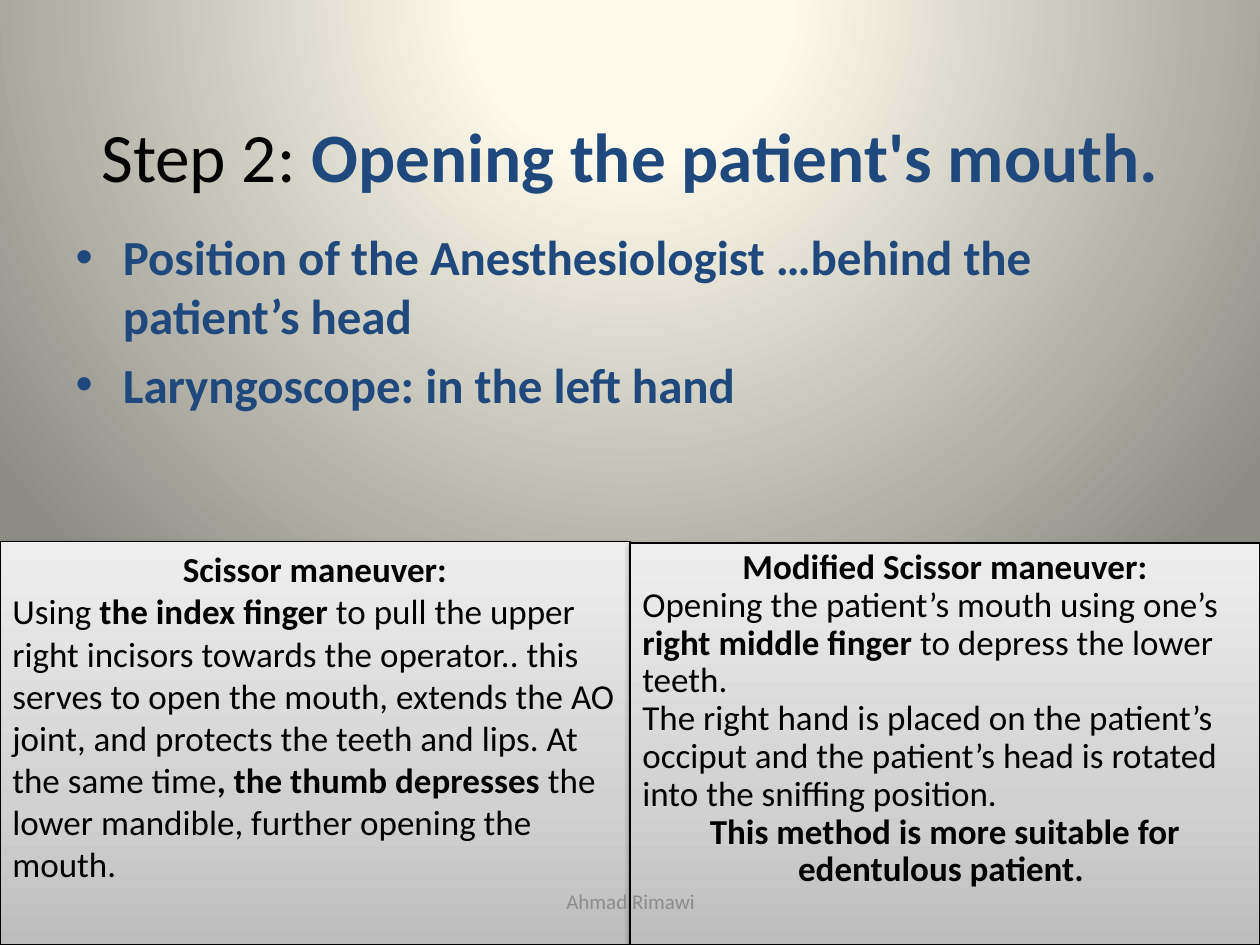
from dataclasses import dataclass

from lxml import etree
from pptx import Presentation
from pptx import util as u
from pptx.dml.color import RGBColor
from pptx.enum import shapes, text
from pptx.oxml.ns import qn


@dataclass(frozen=True)
class Theme:
    font: str = "Calibri"
    ink: str = "000000"
    accent: str = "1F497D"
    muted: str = "8C8C8C"
    title_size: float = 39.6
    bullet_size: float = 28
    panel_size: float = 20
    footer_size: float = 12
    backdrop: tuple = ((0, "FDFAEB"), (20, "FDFAEB"), (100, "8D8C85"))
    panel: tuple = ((0, "BDBDBD"), (35, "D1D1D1"), (100, "EEEEEE"))


THEME = Theme()
CENTER = text.PP_ALIGN.CENTER
LEFT = text.PP_ALIGN.LEFT


def add_node(parent, tag, **attributes):
    values = {name: str(value) for name, value in attributes.items()}
    return etree.SubElement(parent, qn(tag), values)


def start_gradient(fill, owner, stops):
    fill.gradient()
    gradient = owner.find(".//" + qn("a:gradFill"))
    for child in list(gradient):
        gradient.remove(child)
    stop_list = add_node(gradient, "a:gsLst")
    for percent, color in stops:
        stop = add_node(stop_list, "a:gs", pos=percent * 1000)
        add_node(stop, "a:srgbClr", val=color)
    return gradient


def paint_backdrop(slide):
    gradient = start_gradient(slide.background.fill, slide.element, THEME.backdrop)
    glow = add_node(gradient, "a:path", path="circle")
    add_node(glow, "a:fillToRect", l=10000, t=-25000, r=10000, b=125000)


def add_shadow(panel):
    panel.shadow.inherit = False
    effects = panel.element.spPr.find(qn("a:effectLst"))
    shadow = add_node(effects, "a:outerShdw", blurRad=u.Pt(3.1), dist=u.Pt(1.6),
                      dir=90 * 60000, rotWithShape=0)
    add_node(add_node(shadow, "a:srgbClr", val=THEME.ink), "a:alpha", val=38000)


def place(element, left, top, width, height):
    element.left, element.top = u.Inches(left), u.Inches(top)
    element.width, element.height = u.Inches(width), u.Inches(height)


def add_run(paragraph, wording, size, color, bold=False):
    run = paragraph.add_run()
    run.text = wording
    run.font.name = THEME.font
    run.font.size = u.Pt(size)
    run.font.bold = bold
    run.font.color.rgb = RGBColor.from_string(color)


def add_paragraphs(frame, count):
    return [frame.paragraphs[0]] + [frame.add_paragraph() for _ in range(count - 1)]


def fill_title(slide):
    title = slide.shapes.title
    place(title, 0.5, 0.6, 9, 1.25)
    heading = title.text_frame.paragraphs[0]
    add_run(heading, "Step 2: ", THEME.title_size, THEME.ink)
    add_run(heading, "Opening the patient's mouth.", THEME.title_size, THEME.accent, True)


def fill_bullets(slide, points):
    body = slide.placeholders[1]
    place(body, 0.5, 1.75, 9, 2.39)
    for paragraph, point in zip(add_paragraphs(body.text_frame, len(points)), points):
        add_run(paragraph, point, THEME.bullet_size, THEME.accent, True)


def add_panel(slide, left, top, paragraphs, line_spacing=None):
    panel = slide.shapes.add_shape(shapes.MSO_SHAPE.RECTANGLE, 0, 0, 0, 0)
    place(panel, left, top, 5, 7.5 - top)
    gradient = start_gradient(panel.fill, panel.element.spPr, THEME.panel)
    add_node(gradient, "a:lin", ang=270 * 60000, scaled=1)
    panel.line.color.rgb = RGBColor.from_string(THEME.ink)
    panel.line.width = u.Pt(0.75)
    add_shadow(panel)
    frame = panel.text_frame
    frame.word_wrap = True
    frame.auto_size = text.MSO_AUTO_SIZE.SHAPE_TO_FIT_TEXT
    frame.vertical_anchor = text.MSO_ANCHOR.TOP
    rows = add_paragraphs(frame, len(paragraphs))
    for paragraph, (alignment, runs) in zip(rows, paragraphs):
        paragraph.alignment = alignment
        paragraph.line_spacing = line_spacing
        for wording, bold in runs:
            add_run(paragraph, wording, THEME.panel_size, THEME.ink, bold)


def add_footer(slide, author):
    footer = slide.shapes.add_textbox(0, 0, 0, 0)
    place(footer, 3.42, 6.95, 3.17, 0.4)
    footer.text_frame.word_wrap = True
    footer.text_frame.vertical_anchor = text.MSO_ANCHOR.MIDDLE
    credit = footer.text_frame.paragraphs[0]
    credit.alignment = CENTER
    add_run(credit, author, THEME.footer_size, THEME.muted)


def main():
    deck = Presentation()
    deck.slide_width, deck.slide_height = u.Inches(10), u.Inches(7.5)
    slide = deck.slides.add_slide(deck.slide_layouts[1])
    paint_backdrop(slide)
    fill_title(slide)
    fill_bullets(slide, [
        "Position of the Anesthesiologist …behind the patient’s head",
        "Laryngoscope: in the left hand",
    ])
    add_panel(slide, 0, 4.3, [
        (CENTER, [("Scissor maneuver:", True)]),
        (LEFT, [
            ("Using ", False),
            ("the index finger ", True),
            ("to pull the upper right incisors towards the operator.. this serves "
             "to open the mouth, extends the AO joint, and protects the teeth and "
             "lips. At the same time", False),
            (", the thumb depresses", True),
            (" the lower mandible, further opening the mouth.", False),
        ]),
    ])
    add_panel(slide, 5, 4.31, [
        (CENTER, [("Modified Scissor maneuver:", True)]),
        (LEFT, [
            ("Opening the patient’s mouth using one’s ", False),
            ("right middle finger ", True),
            ("to depress the lower teeth.", False),
        ]),
        (LEFT, [("The right hand is placed on the patient’s occiput and the "
                 "patient’s head is rotated into the sniffing position.", False)]),
        (CENTER, [("This method is more suitable for edentulous patient. ", True)]),
    ], line_spacing=0.9)
    add_footer(slide, "Ahmad Rimawi")
    deck.save("out.pptx")


if __name__ == "__main__":
    main()
